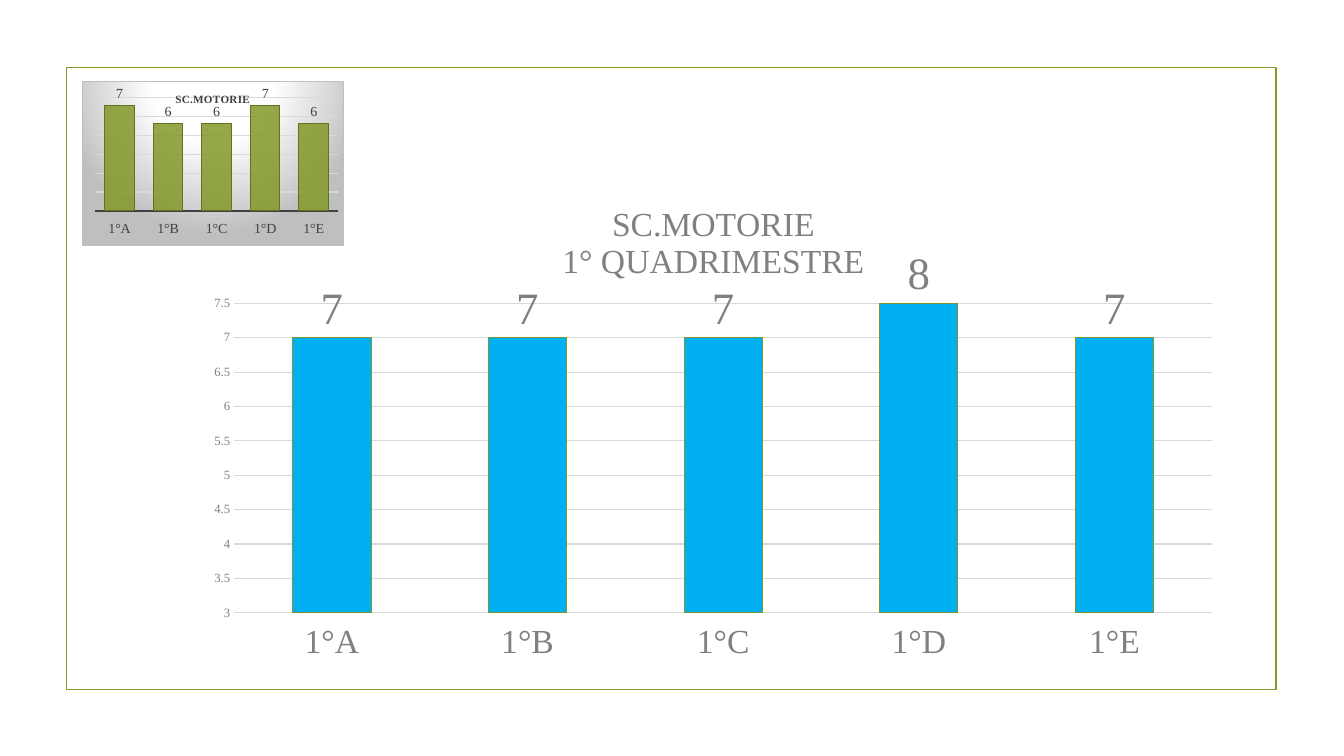
from dataclasses import dataclass

from lxml import etree
from pptx import Presentation
from pptx.chart.data import CategoryChartData
from pptx.dml.color import RGBColor
from pptx.enum.chart import XL_CHART_TYPE, XL_LABEL_POSITION, XL_TICK_LABEL_POSITION, XL_TICK_MARK
from pptx.enum.shapes import MSO_SHAPE
from pptx.oxml import parse_xml
from pptx.oxml.ns import nsdecls, qn
from pptx.util import Inches, Pt

COLUMNS = XL_CHART_TYPE.COLUMN_CLUSTERED
OUTSIDE_END = XL_LABEL_POSITION.OUTSIDE_END
LOW = XL_TICK_LABEL_POSITION.LOW
NO_TICK = XL_TICK_MARK.NONE
RECTANGLE = MSO_SHAPE.RECTANGLE

CLASSES = ["1°A", "1°B", "1°C", "1°D", "1°E"]
SLIDE_SIZE = (13.33, 7.5)
FRAME = (0.66, 0.67, 12, 6.17)

TERM_CHART = {
    "box": (1.92, 1.84, 10.31, 4.81),
    "title": ["SC.MOTORIE", "1° QUADRIMESTRE"],
    "series": "Series 1",
    "values": [7, 7, 7, 8, 7],
    "scale": (3, 7.5, 0.5),
    "gap": 150,
    "sizes": {"title": 24, "category": 24, "label": 32},
    "bold": False,
    "text": "808080",
    "bar": "00B0F0",
    "bar_line": "809629",
}
ENTRY_CHART = {
    "box": (0.81, 0.8, 2.6, 1.64),
    "title": ["SC.MOTORIE"],
    "series": "SC.MOTORIE",
    "values": [7, 6, 6, 7, 6],
    "scale": (1.4, 7.4, 1),
    "gap": 65,
    "sizes": {"title": 8, "category": 10, "label": 10},
    "bold": True,
    "text": "404040",
    "bar": "83992A",
    "bar_line": "62731F",
}
ENTRY_PLOT = {"x": 0.05, "y": 0.1, "w": 0.93, "h": 0.69}
ENTRY_BAR_OPACITY = 85


@dataclass(frozen=True)
class Theme:
    font: str = "Times New Roman"
    frame: str = "83992A"
    grid: str = "D9D9D9"
    light: str = "FFFFFF"
    shade: str = "BFBFBF"
    base_size: int = 10
    scale_size: int = 9
    thin: float = 0.75
    frame_width: float = 1.25
    axis_width: float = 1.5


THEME = Theme()


def style_font(font, size, color, bold=False):
    font.name = THEME.font
    font.size = Pt(size)
    font.bold = bold
    font.color.rgb = RGBColor.from_string(color)


def style_line(line, color, width):
    line.color.rgb = RGBColor.from_string(color)
    line.width = Pt(width)


def add_title(chart, content):
    chart.has_title = True
    frame = chart.chart_title.text_frame
    for index, text in enumerate(content["title"]):
        paragraph = frame.add_paragraph() if index else frame.paragraphs[0]
        run = paragraph.add_run()
        run.text = text
        style_font(run.font, content["sizes"]["title"], content["text"], content["bold"])


def add_column_chart(slide, content):
    data = CategoryChartData(number_format="0")
    data.categories = CLASSES
    data.add_series(content["series"], content["values"])
    box = [Inches(length) for length in content["box"]]
    chart = slide.shapes.add_chart(COLUMNS, *box, data).chart
    chart.has_legend = False
    chart.font.name = THEME.font
    chart.font.size = Pt(THEME.base_size)
    add_title(chart, content)

    plot = chart.plots[0]
    plot.gap_width = content["gap"]
    plot.vary_by_categories = False
    series = plot.series[0]
    series.format.fill.solid()
    series.format.fill.fore_color.rgb = RGBColor.from_string(content["bar"])
    style_line(series.format.line, content["bar_line"], THEME.thin)
    labels = series.data_labels
    labels.show_value = True
    labels.position = OUTSIDE_END
    style_font(labels.font, content["sizes"]["label"], content["text"])

    categories, values = chart.category_axis, chart.value_axis
    for axis in (categories, values):
        axis.major_tick_mark = axis.minor_tick_mark = NO_TICK
        axis.format.line.fill.background()
    categories.tick_label_position = LOW
    style_font(categories.tick_labels.font, content["sizes"]["category"], content["text"])
    style_font(values.tick_labels.font, THEME.scale_size, content["text"])
    values.tick_labels.number_format = "General"
    values.tick_labels.number_format_is_linked = False
    values.minimum_scale, values.maximum_scale, values.major_unit = content["scale"]
    values.has_major_gridlines = True
    style_line(values.major_gridlines.format.line, THEME.grid, THEME.thin)
    return chart


def set_background(chart):
    stops = "".join(
        f'<a:gs pos="{share * 1000}"><a:srgbClr val="{color}"/></a:gs>'
        for share, color in ((0, THEME.light), (39, THEME.light), (100, THEME.shade))
    )
    properties = parse_xml(
        f'<c:spPr {nsdecls("c", "a")}><a:gradFill><a:gsLst>{stops}</a:gsLst>'
        '<a:path path="circle"><a:fillToRect l="50000" t="-80000" r="50000" b="180000"/></a:path>'
        f'</a:gradFill><a:ln w="{Pt(THEME.thin)}"><a:solidFill>'
        f'<a:srgbClr val="{THEME.shade}"/></a:solidFill></a:ln></c:spPr>'
    )
    chart.element.find(qn("c:chart")).addnext(properties)


def set_plot_layout(chart, shares):
    plot_area = chart.element.find(".//" + qn("c:plotArea"))
    for layout in plot_area.findall(qn("c:layout")):
        plot_area.remove(layout)
    layout = etree.Element(qn("c:layout"))
    manual = etree.SubElement(layout, qn("c:manualLayout"))
    settings = {"layoutTarget": "inner", "xMode": "edge", "yMode": "edge", **shares}
    for name, value in settings.items():
        etree.SubElement(manual, qn("c:" + name)).set("val", str(value))
    plot_area.insert(0, layout)


def finish_entry_chart(chart):
    chart.value_axis.visible = False
    style_line(chart.category_axis.format.line, ENTRY_CHART["text"], THEME.axis_width)
    bar_color = chart.element.find(".//" + qn("c:ser")).find(
        f'{qn("c:spPr")}/{qn("a:solidFill")}/{qn("a:srgbClr")}'
    )
    etree.SubElement(bar_color, qn("a:alpha")).set("val", str(ENTRY_BAR_OPACITY * 1000))
    chart.element.find(f'.//{qn("c:title")}/{qn("c:overlay")}').set("val", "1")
    set_plot_layout(chart, ENTRY_PLOT)
    set_background(chart)


def main():
    presentation = Presentation()
    presentation.slide_width, presentation.slide_height = map(Inches, SLIDE_SIZE)
    slide = presentation.slides.add_slide(presentation.slide_layouts[6])
    frame = slide.shapes.add_shape(RECTANGLE, *map(Inches, FRAME))
    frame.shadow.inherit = False
    frame.fill.background()
    style_line(frame.line, THEME.frame, THEME.frame_width)
    add_column_chart(slide, TERM_CHART)
    finish_entry_chart(add_column_chart(slide, ENTRY_CHART))
    presentation.save("out.pptx")


if __name__ == "__main__":
    main()
